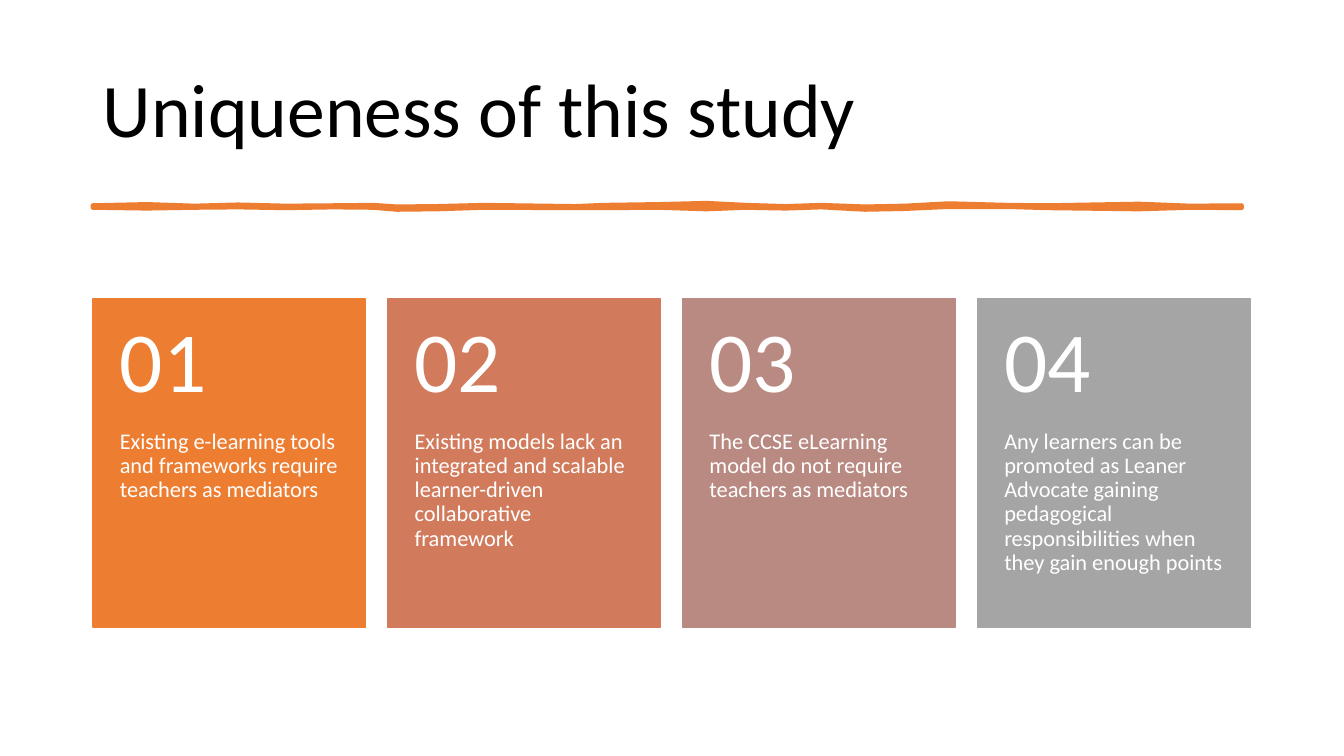
from pptx import Presentation
from pptx.dml.color import RGBColor
from pptx.enum import shapes, text
from pptx.util import Cm, Pt


def paint(shape, color, line_width):
    shape.shadow.inherit = False
    shape.fill.solid()
    shape.fill.fore_color.rgb = RGBColor.from_string(color)
    shape.line.color.rgb = RGBColor.from_string(color)
    shape.line.width = Pt(line_width)


def add_text(box, words, size, color, margins, anchor):
    """Box and margins are left, top, width, height / left, top, right, bottom in cm."""
    frame = slide.shapes.add_textbox(*[Cm(value) for value in box]).text_frame
    frame.word_wrap = True
    frame.vertical_anchor = anchor
    frame.margin_left, frame.margin_top, frame.margin_right, frame.margin_bottom = [
        Cm(value) for value in margins]
    frame.text = words
    paragraph = frame.paragraphs[0]
    paragraph.line_spacing = 0.9
    font = paragraph.runs[0].font
    font.name = "Calibri"
    font.size = Pt(size)
    font.color.rgb = RGBColor.from_string(color)


presentation = Presentation()
presentation.slide_width = Cm(33.87)
presentation.slide_height = Cm(19.05)
slide = presentation.slides.add_slide(presentation.slide_layouts[6])

# Title
LEFT = 2.34
add_text((LEFT, 1.02, 29.21, 3.68), "Uniqueness of this study", 54, "000000",
         (0.25, 0.13, 0.25, 0.13), text.MSO_ANCHOR.MIDDLE)

# Hand-drawn rule: x, upper edge, lower edge
brush_profile = [
    (2.34, 5.18, 5.23), (3.7, 5.15, 5.25), (4.9, 5.19, 5.23), (6.0, 5.16, 5.22),
    (7.2, 5.19, 5.24), (8.4, 5.18, 5.22), (9.4, 5.17, 5.23), (10.0, 5.21, 5.28),
    (11.0, 5.2, 5.27), (12.2, 5.17, 5.23), (14.5, 5.2, 5.24), (15.2, 5.17, 5.24),
    (16.6, 5.15, 5.23), (17.8, 5.12, 5.27), (18.8, 5.17, 5.23), (19.8, 5.2, 5.25),
    (20.7, 5.17, 5.22), (21.8, 5.21, 5.28), (22.8, 5.19, 5.26), (23.9, 5.13, 5.21),
    (25.4, 5.17, 5.21), (26.4, 5.18, 5.24), (28.7, 5.14, 5.27), (30.0, 5.19, 5.23),
    (31.29, 5.18, 5.24),
]
upper_edge = [(Cm(x), Cm(top)) for x, top, bottom in brush_profile]
lower_edge = [(Cm(x), Cm(bottom)) for x, top, bottom in reversed(brush_profile)]
builder = slide.shapes.build_freeform(*upper_edge[0])
builder.add_line_segments(upper_edge[1:] + lower_edge, close=True)
paint(builder.convert_to_shape(), "ED7D31", 3.25)

# Numbered cards
CARD_TOP, CARD_WIDTH, CARD_HEIGHT, CARD_PITCH = 7.54, 6.88, 8.26, 7.43
NUMBER_HEIGHT = 3.3
cards = [
    ("ED7D31", "Existing e-learning tools and frameworks require teachers as mediators"),
    ("D17B5C", "Existing models lack an integrated and scalable learner-driven "
               "collaborative framework"),
    ("B98A82", "The CCSE eLearning model do not require teachers as mediators"),
    ("A5A5A5", "Any learners can be promoted as Leaner Advocate gaining pedagogical "
               "responsibilities when they gain enough points"),
]
for index, (color, statement) in enumerate(cards):
    left = LEFT + index * CARD_PITCH
    card = slide.shapes.add_shape(shapes.MSO_SHAPE.RECTANGLE, Cm(left), Cm(CARD_TOP),
                                  Cm(CARD_WIDTH), Cm(CARD_HEIGHT))
    paint(card, color, 1)
    add_text((left, CARD_TOP + NUMBER_HEIGHT, CARD_WIDTH, CARD_HEIGHT - NUMBER_HEIGHT),
             statement, 16, "FFFFFF", (0.68, 0, 0.68, 0.91), text.MSO_ANCHOR.TOP)
    add_text((left, CARD_TOP, CARD_WIDTH, NUMBER_HEIGHT), f"{index + 1:02}", 61, "FFFFFF",
             (0.68, 0.46, 0.68, 0.46), text.MSO_ANCHOR.MIDDLE)

presentation.save("out.pptx")
